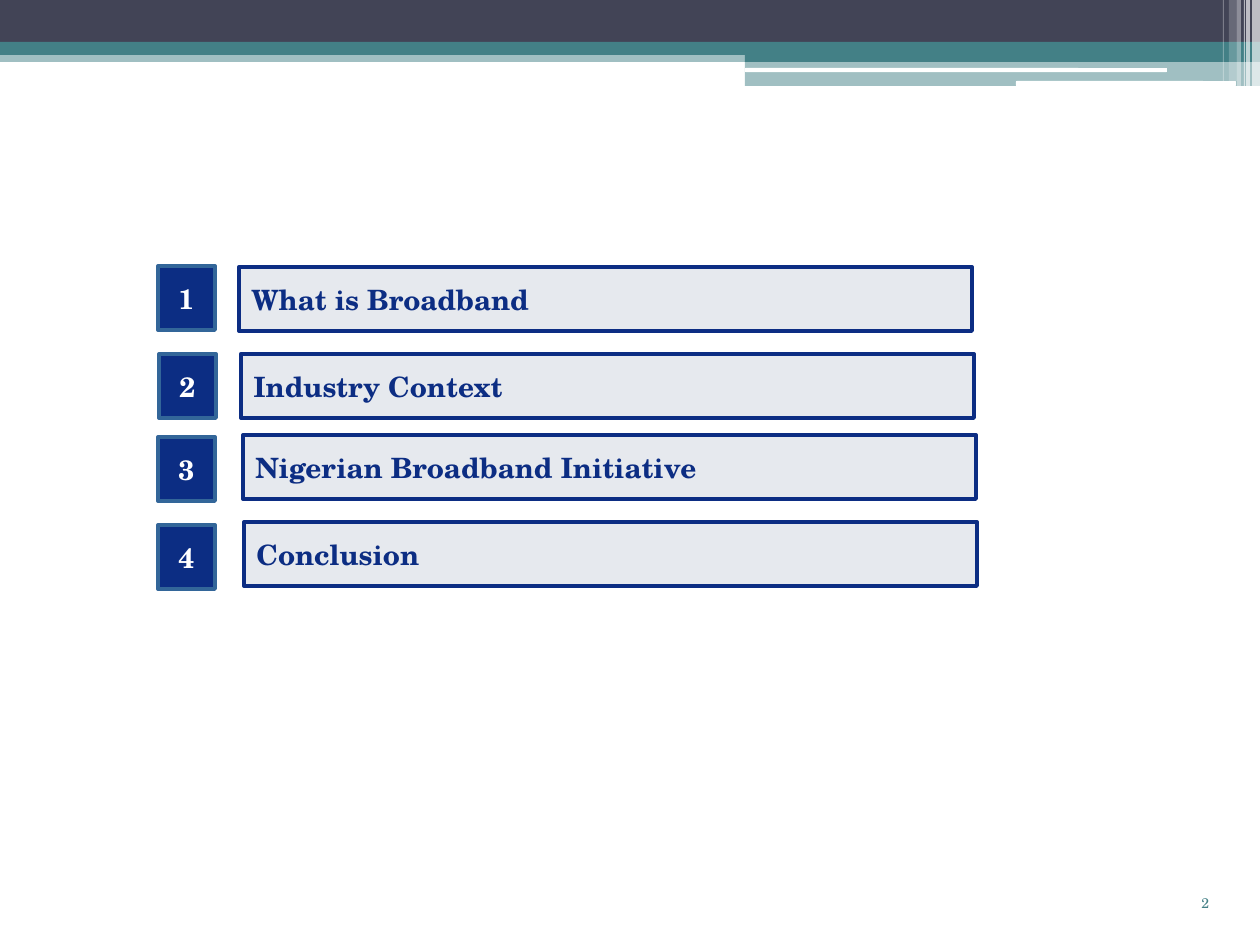
import pptx
import pptx.util
import pptx.dml.color
import pptx.enum.shapes
import pptx.enum.text
import pptx.oxml
import pptx.oxml.ns

KIND = pptx.enum.shapes.MSO_SHAPE
ALIGN = pptx.enum.text.PP_ALIGN
ANCHOR = pptx.enum.text.MSO_ANCHOR
NAVY, TEAL, SLATE, WHITE = "0C2D83", "438086", "424456", "FFFFFF"
PALE, BLUE = "E6E9EE", "336699"


def px(num):
    return pptx.util.Emu(round(num * 914400 / 126))


def color(code):
    return pptx.dml.color.RGBColor.from_string(code)


class Deck:
    """Holds the text style and the current slide, and draws on it."""

    def __init__(self, slide, font):
        self.slide = slide
        self.font = font

    def rect(self, box, fill, alpha=100, kind=KIND.RECTANGLE):
        shape = self.slide.shapes.add_shape(kind, *map(px, box))
        shape.shadow.inherit = False
        shape.fill.solid()
        shape.fill.fore_color.rgb = color(fill)
        shape.line.fill.background()
        if alpha < 100:
            tone = shape._element.spPr.find(".//" + pptx.oxml.ns.qn("a:srgbClr"))
            node = pptx.oxml.parse_xml(
                f'<a:alpha {pptx.oxml.ns.nsdecls("a")} val="{alpha * 1000}"/>')
            tone.append(node)
        return shape

    def words(self, shape, text, size, ink, bold=False, align=ALIGN.LEFT):
        para = shape.text_frame.paragraphs[0]
        para.alignment = align
        run = para.add_run()
        run.text = text
        run.font.name = self.font
        run.font.size = pptx.util.Pt(size)
        run.font.bold = bold
        run.font.color.rgb = color(ink)

    def panel(self, box, fill, edge, text, ink, align=ALIGN.LEFT):
        shape = self.rect(box, fill)
        shape.line.color.rgb = color(edge)
        shape.line.width = pptx.util.Pt(2.25)
        frame = shape.text_frame
        frame.word_wrap = True
        frame.vertical_anchor = ANCHOR.MIDDLE
        self.words(shape, text, 16, ink, True, align)
        props = frame.paragraphs[0]._p.get_or_add_pPr()
        props.set("marL", str(px(24)))
        props.set("indent", str(-px(24)))

    def label(self, box, text, size, ink):
        shape = self.slide.shapes.add_textbox(*map(px, box))
        shape.text_frame.word_wrap = True
        self.words(shape, text, size, ink)


def main():
    show = pptx.Presentation()
    show.slide_width, show.slide_height = px(1260), px(945)
    deck = Deck(show.slides.add_slide(show.slide_layouts[6]), "TeX Gyre Schola")

    bands = [
        (0, 50, 1260, 12, TEAL, 50),
        (0, 0, 1260, 43, SLATE, 100),
        (0, 42, 1260, 13, TEAL, 100),
        (745, 49, 515, 13, TEAL, 100),
        (745, 61, 515, 25, TEAL, 50),
    ]
    for *box, fill, alpha in bands:
        deck.rect(box, fill, alpha)
    for box in [(745, 68, 422, 4), (1016, 81, 220, 5)]:
        deck.rect(box, WHITE, kind=KIND.ROUNDED_RECTANGLE)
    stripes = [
        (1252, 8, 86, 65), (1246, 4, 86, 65), (1244, 1, 86, 60),
        (1237, 4, 86, 40), (1229, 8, 81, 20), (1223, 1, 81, 30),
    ]
    for left, width, height, alpha in stripes:
        deck.rect((left, 0, width, height), WHITE, alpha)

    topics = [
        ("What is Broadband", 239, 267, 158, 266),
        ("Industry Context", 241, 354, 159, 354),
        ("Nigerian Broadband Initiative", 243, 435, 158, 437),
        ("Conclusion", 244, 522, 158, 525),
    ]
    for num, (text, left, top, tag, rise) in enumerate(topics, 1):
        deck.panel((left, top, 733, 64), PALE, NAVY, text, NAVY)
        deck.panel((tag, rise, 57, 64), NAVY, BLUE, str(num), WHITE, ALIGN.CENTER)
    deck.label((1189, 888, 71, 40), "2", 8, TEAL)
    show.save("out.pptx")


if __name__ == "__main__":
    main()
